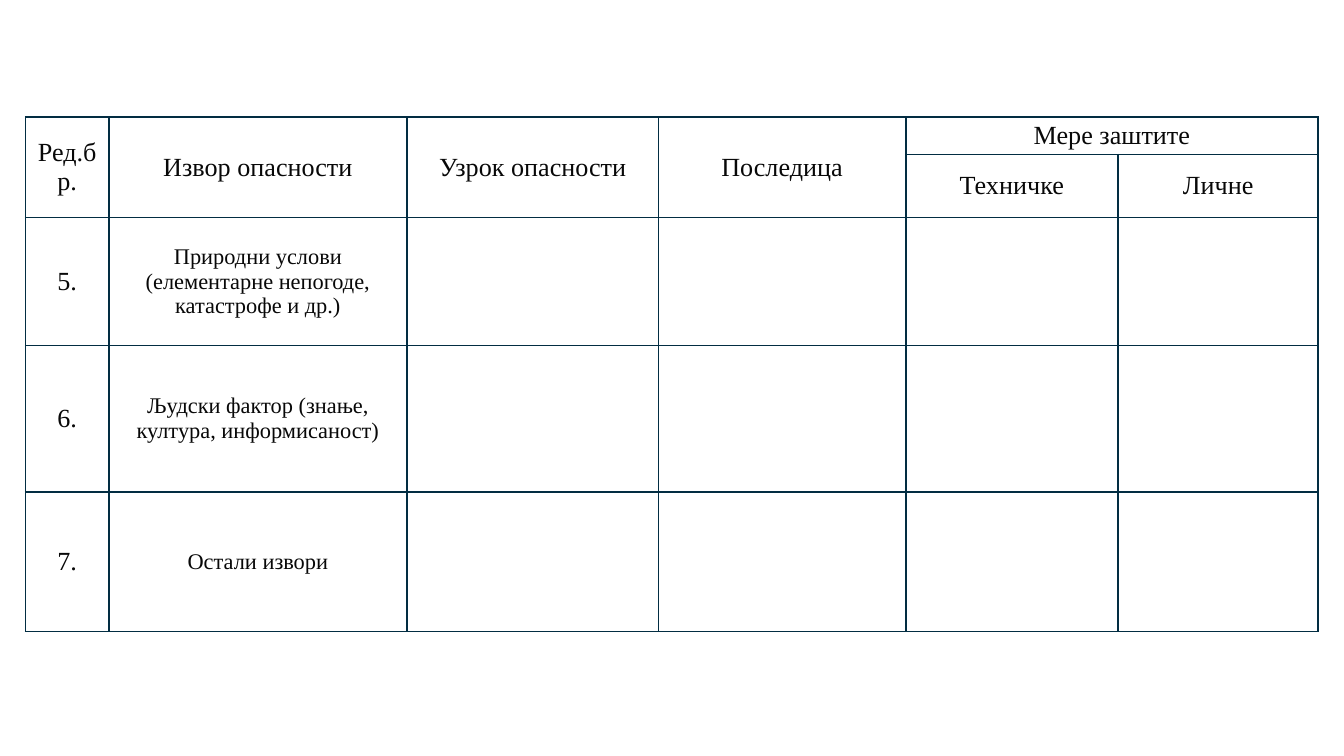
from pptx import Presentation
from pptx.dml.color import RGBColor
from pptx.enum.text import MSO_ANCHOR, PP_ALIGN
from pptx.oxml.ns import qn
from pptx.util import Inches, Pt
from lxml.etree import SubElement

SLIDE_WIDTH = 10
SLIDE_HEIGHT = SLIDE_WIDTH * 9 / 16

FONT = "Times New Roman"
TEXT_COLOR = "080808"
BORDER_COLOR = "022D42"
HEADER_SIZE, SOURCE_SIZE = 14, 12

LEFT, TOP = 0.19, 0.87
COLUMN_WIDTHS = [0.62, 2.22, 1.87, 1.84, 1.58, 1.49]
ROW_HEIGHTS = [0.28, 0.47, 0.95, 1.09, 1.04]

ROWS = [
    ["Ред.бр.", "Извор опасности", "Узрок опасности", "Последица", "Мере заштите", ""],
    ["", "", "", "", "Техничке", "Личне"],
    ["5.", "Природни услови (елементарне непогоде, катастрофе и др.)", "", "", "", ""],
    ["6.", "Људски фактор (знање, култура, информисаност)", "", "", "", ""],
    ["7.", "Остали извори", "", "", "", ""],
]
HEADER_ROWS = 2
MEASURES_COLUMN = 4


def color(hex_string):
    return RGBColor.from_string(hex_string)


def set_attributes(target, values):
    for name, value in values.items():
        setattr(target, name, value)


def draw_borders(cell):
    properties = cell._tc.get_or_add_tcPr()
    for side in ("lnL", "lnR", "lnT", "lnB"):
        line = SubElement(properties, qn(f"a:{side}"), w=str(Pt(1)))
        fill = SubElement(line, qn("a:solidFill"))
        SubElement(fill, qn("a:srgbClr"), val=BORDER_COLOR)


def format_cell(cell):
    draw_borders(cell)
    cell.fill.background()
    set_attributes(cell, {
        "margin_left": Inches(0.07), "margin_right": Inches(0.07),
        "margin_top": 0, "margin_bottom": 0,
        "vertical_anchor": MSO_ANCHOR.MIDDLE,
    })


def write_cell(cell, text, size):
    paragraph = cell.text_frame.paragraphs[0]
    paragraph.alignment = PP_ALIGN.CENTER
    # An empty cell takes its line height from the end-of-paragraph size.
    paragraph._p.get_or_add_endParaRPr().set("sz", str(size * 100))
    if text:
        run = paragraph.add_run()
        run.text = text
        set_attributes(run.font, {"name": FONT, "size": Pt(size), "bold": False})
        run.font.color.rgb = color(TEXT_COLOR)


def merge_header(table):
    for column in range(MEASURES_COLUMN):
        table.cell(0, column).merge(table.cell(1, column))
    measures = table.cell(0, MEASURES_COLUMN)
    measures.merge(table.cell(0, MEASURES_COLUMN + 1))
    measures.text_frame.paragraphs[0].space_after = Pt(10)


def add_hazard_table(slide):
    table = slide.shapes.add_table(
        len(ROW_HEIGHTS), len(COLUMN_WIDTHS), Inches(LEFT), Inches(TOP),
        Inches(sum(COLUMN_WIDTHS)), Inches(sum(ROW_HEIGHTS))).table
    set_attributes(table, {"first_row": False, "horz_banding": False})
    for column, width in zip(table.columns, COLUMN_WIDTHS):
        column.width = Inches(width)
    for row, height in zip(table.rows, ROW_HEIGHTS):
        row.height = Inches(height)
    for row_index, texts in enumerate(ROWS):
        for column_index, text in enumerate(texts):
            is_source = row_index >= HEADER_ROWS and column_index == 1
            cell = table.cell(row_index, column_index)
            format_cell(cell)
            write_cell(cell, text, SOURCE_SIZE if is_source else HEADER_SIZE)
    merge_header(table)


def main():
    presentation = Presentation()
    set_attributes(presentation, {
        "slide_width": Inches(SLIDE_WIDTH), "slide_height": Inches(SLIDE_HEIGHT),
    })
    slide = presentation.slides.add_slide(presentation.slide_layouts[6])
    add_hazard_table(slide)
    presentation.save("out.pptx")


if __name__ == "__main__":
    main()
